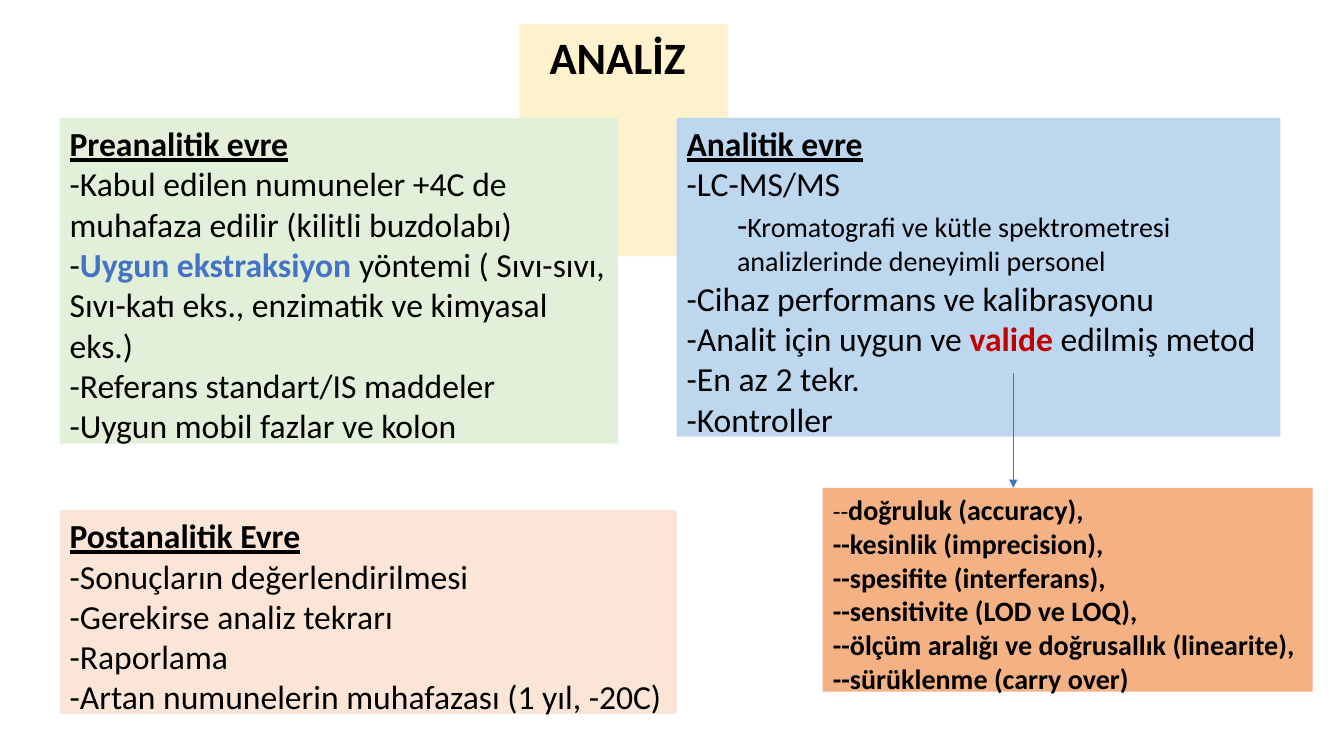
"""Build the slide on the three phases of laboratory analysis."""
from dataclasses import dataclass

from lxml.etree import SubElement
from pptx import Presentation
from pptx.dml.color import RGBColor
from pptx.enum.shapes import MSO_CONNECTOR
from pptx.enum.text import MSO_ANCHOR, MSO_AUTO_SIZE, PP_ALIGN
from pptx.oxml.ns import qn
from pptx.util import Inches, Pt


@dataclass(frozen=True)
class Theme:
    """Colours and type sizes of the slide."""
    font: str = "Calibri"
    text: str = "000000"
    blue: str = "4472C4"
    red: str = "C00000"
    cream: str = "FFF2CC"
    green: str = "E2F0D9"
    sky: str = "BDD7EE"
    peach: str = "FBE5D6"
    orange: str = "F4B183"
    title: int = 32
    body: int = 24
    detail: int = 20
    dash: int = 18


THEME = Theme()
HEADING = {"bold": True, "underline": True}
DETAIL = {"size": THEME.detail}
STRONG = {"bold": True}

TITLE = ("ANALİZ", (5.15, 0.24, 2.07, 0.64))
TITLE_INDENT = 0.3
DETAIL_INDENT = 0.5

PREANALYTIC = [
    [("Preanalitik evre", HEADING)],
    "-Kabul edilen numuneler +4C de muhafaza edilir (kilitli buzdolabı)",
    [("-", {}), ("Uygun ekstraksiyon ", {"bold": True, "color": THEME.blue}),
     ("yöntemi ( Sıvı-sıvı, Sıvı-katı eks., enzimatik ve kimyasal eks.)", {})],
    "-Referans standart/IS maddeler",
    "-Uygun mobil fazlar ve kolon",
]
ANALYTIC = [
    [("Analitik evre", HEADING)],
    "-LC-MS/MS",
    [("-", {}),
     ("Kromatografi ve kütle spektrometresi analizlerinde deneyimli personel", DETAIL)],
    "-Cihaz performans ve kalibrasyonu",
    [("-Analit için uygun ve ", {}), ("valide ", {"bold": True, "color": THEME.red}),
     ("edilmiş metod", {})],
    "-En az 2 tekr.",
    "-Kontroller",
]
POSTANALYTIC = [
    [("Postanalitik Evre", HEADING)],
    "-Sonuçların değerlendirilmesi",
    "-Gerekirse analiz tekrarı",
    "-Raporlama",
    "-Artan numunelerin muhafazası (1 yıl, -20C)",
]
VALIDATION = [
    [("--", {"size": THEME.dash}), ("doğruluk (accuracy),", STRONG)],
    [("--kesinlik (imprecision),", STRONG)],
    [("--spesifite (interferans),", STRONG)],
    [("--sensitivite (LOD ve LOQ),", STRONG)],
    [("--ölçüm aralığı ve doğrusallık (linearite),", STRONG)],
    [("--sürüklenme (carry over)", STRONG)],
]
PANELS = [
    (PREANALYTIC, (0.59, 1.17, 5.54, 3.33), THEME.green, THEME.body),
    (ANALYTIC, (6.71, 1.17, 5.99, 3.26), THEME.sky, THEME.body),
    (POSTANALYTIC, (0.59, 5.06, 6.12, 2.12), THEME.peach, THEME.body),
    (VALIDATION, (8.16, 4.84, 4.86, 2.12), THEME.orange, THEME.detail),
]
ARROW = ((10.05, 3.7), (10.05, 4.84))


def place(panel, box, fill):
    """Move a placeholder, fill it and let it grow with its text."""
    panel.left, panel.top, panel.width, panel.height = map(Inches, box)
    panel.fill.solid()
    panel.fill.fore_color.rgb = RGBColor.from_string(fill)
    frame = panel.text_frame
    frame.vertical_anchor = MSO_ANCHOR.TOP
    frame.auto_size = MSO_AUTO_SIZE.SHAPE_TO_FIT_TEXT
    frame.word_wrap = True
    return frame


def style(font, size=None, bold=None, underline=None, color=None):
    """Set the given traits of a font."""
    if size:
        font.size = Pt(size)
    if bold is not None:
        font.bold = bold
    if underline is not None:
        font.underline = underline
    if color:
        font.color.rgb = RGBColor.from_string(color)


def write_line(paragraph, line, size):
    """Write one unbulleted line made of plain or styled pieces."""
    pieces = [(line, {})] if isinstance(line, str) else line
    indented = any(traits is DETAIL for _, traits in pieces)
    properties = paragraph._p.get_or_add_pPr()
    properties.set("marL", str(Inches(DETAIL_INDENT if indented else 0)))
    properties.set("indent", "0")
    SubElement(properties, qn("a:buNone"))
    paragraph.alignment = PP_ALIGN.LEFT
    paragraph.space_before = Pt(0)
    paragraph.font.name = THEME.font
    shared = pieces[0][1] if len(pieces) == 1 else {}
    style(paragraph.font, **{"size": size, "bold": False, "color": THEME.text, **shared})
    for text, traits in pieces:
        run = paragraph.add_run()
        run.text = text
        if not shared:
            style(run.font, **traits)


def add_arrow(slide, start, end):
    """Draw the thin arrow that leads to the validation criteria."""
    arrow = slide.shapes.add_connector(
        MSO_CONNECTOR.STRAIGHT, *map(Inches, (*start, *end)))
    arrow.line.color.rgb = RGBColor.from_string(THEME.blue)
    arrow.line.width = Pt(0.5)
    SubElement(arrow.line._get_or_add_ln(), qn("a:tailEnd"), type="triangle")
    SubElement(arrow._element.spPr, qn("a:effectLst"))


def main():
    """Assemble and save the slide."""
    deck = Presentation()
    deck.slide_width, deck.slide_height = Inches(13.33), Inches(7.5)
    slide = deck.slides.add_slide(deck.slide_layouts.get_by_name("Comparison"))
    heading, *bodies = list(slide.placeholders)[:1 + len(PANELS)]

    title, title_box = TITLE
    frame = place(heading, title_box, THEME.cream)
    frame.word_wrap = False
    frame.margin_left = Inches(TITLE_INDENT)
    write_line(frame.paragraphs[0], [(title, STRONG)], THEME.title)

    for body, (lines, box, fill, size) in zip(bodies, PANELS):
        frame = place(body, box, fill)
        for number, line in enumerate(lines):
            paragraph = frame.add_paragraph() if number else frame.paragraphs[0]
            write_line(paragraph, line, size)

    add_arrow(slide, *ARROW)
    deck.save("out.pptx")


if __name__ == "__main__":
    main()
